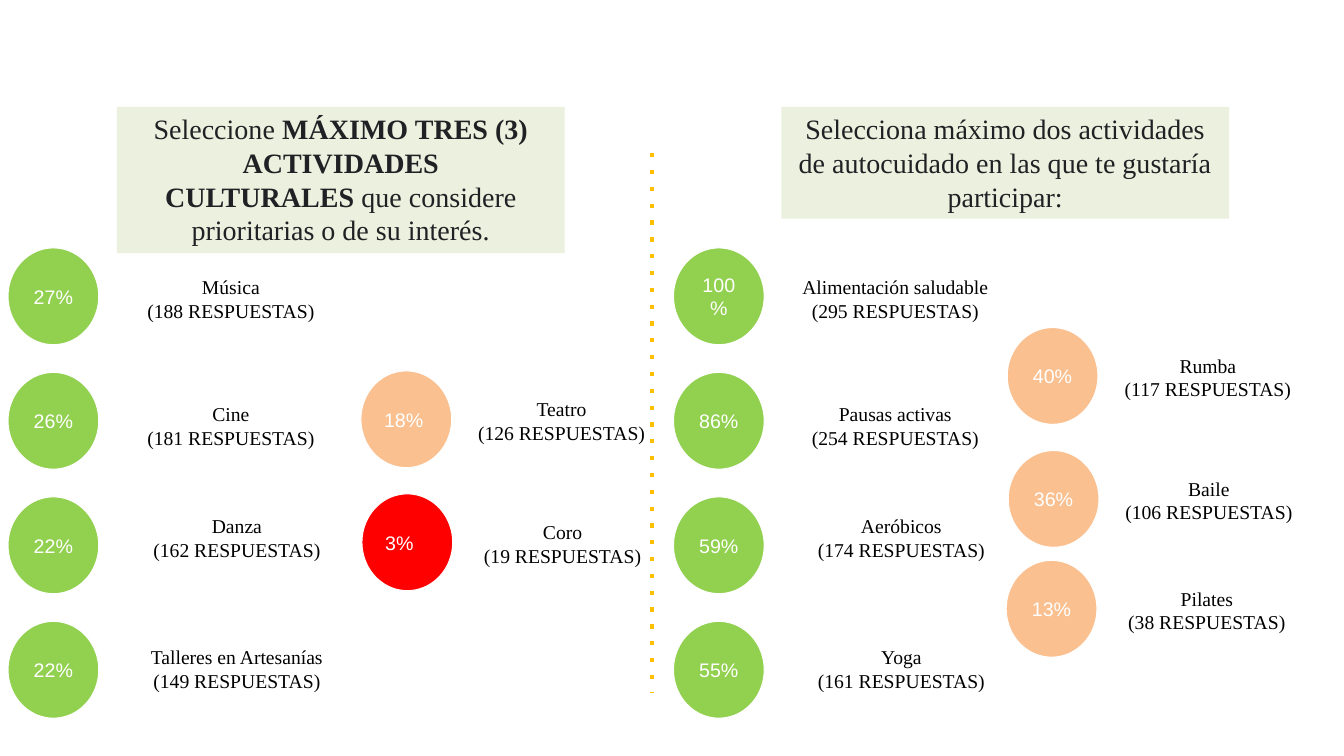
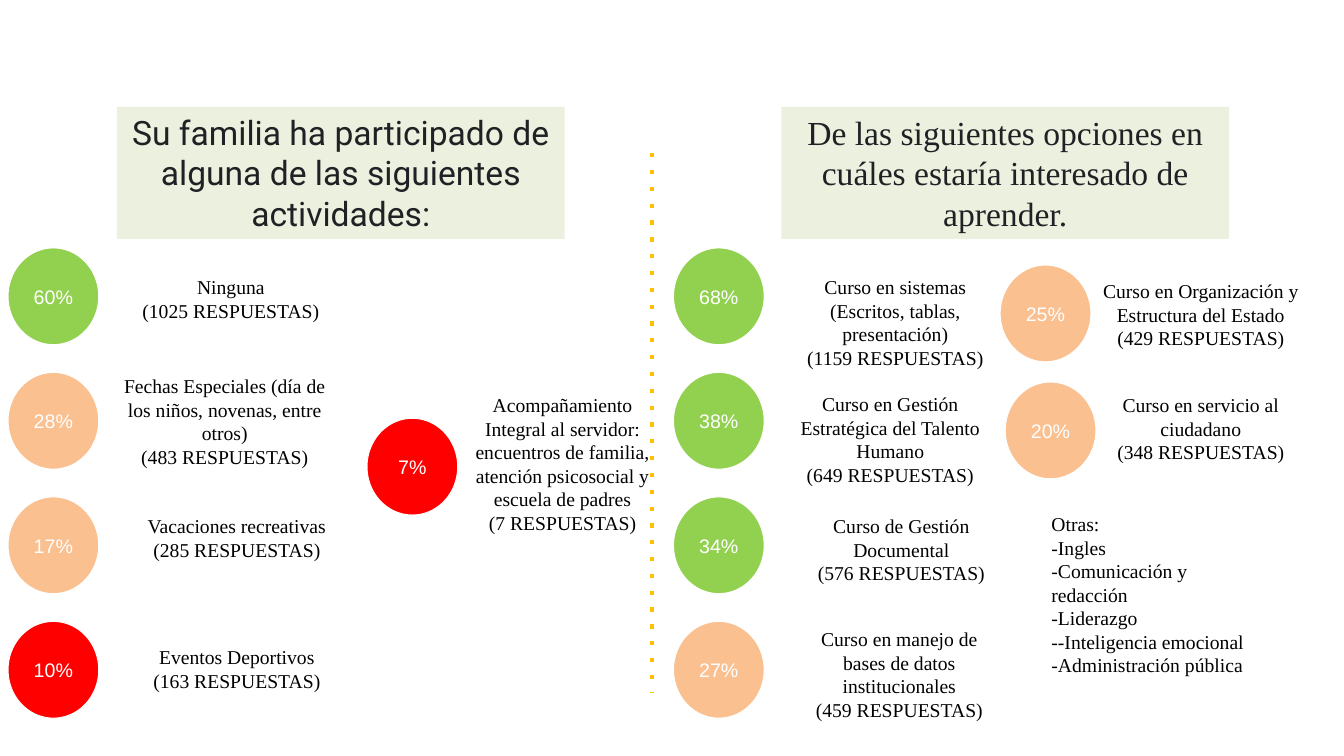
from pptx import Presentation
from pptx.dml.color import RGBColor
from pptx.enum import dml, shapes, text
from pptx.oxml.ns import qn
from pptx.util import Inches, Pt

GREEN, PEACH, RED = "92D050", "FAC090", "FF0000"
BAND, INK, GOLD, WHITE, BLACK = "EBF1DE", "202124", "FFC000", "FFFFFF", "000000"
SERIF = "Times New Roman"
LEFT, CENTER = text.PP_ALIGN.LEFT, text.PP_ALIGN.CENTER
GLUE = chr(160)  # no-break space

# Grid: two halves, each with four rows of circle and label
HALF, TOP, ROW = 6.6, 2.46, 1.235
DOT_W, DOT_H = 0.9, 0.96
LABEL_W, LINE_H = 2.18, 0.235
LABELS = [(1.2, 2.63), (1.2, 3.89), (1.26, 5), (1.26, 6.3)]
WIDE = {"28%": 2.26}  # label widths that differ, by share


def color(code):
    return RGBColor.from_string(code)


def write(shape, lines, size, font, ink, align=CENTER, pad=0.1, fit=True):
    """Fill a shape with paragraphs in one style."""
    frame = shape.text_frame
    frame.text = "\n".join(lines)
    frame.word_wrap = True
    frame.margin_left = frame.margin_right = Inches(0.1)
    frame.margin_top = frame.margin_bottom = Inches(pad)
    frame.vertical_anchor = text.MSO_ANCHOR.TOP if fit else text.MSO_ANCHOR.MIDDLE
    frame.auto_size = (text.MSO_AUTO_SIZE.SHAPE_TO_FIT_TEXT if fit
                       else text.MSO_AUTO_SIZE.NONE)
    for par in frame.paragraphs:
        par.alignment = align
        for run in par.runs:
            run.font.size, run.font.name = Pt(size), font
            run.font.color.rgb = color(ink)


# heads: text, size, font, height
# rows (by half): share, colour, name, answers, label lines, label shift x, y
# sides: circle x, y, alignment, share, colour, name, answers, lines, shift x, y
pages = [
    {
        "heads": [
            (f"Seleccione{GLUE}MÁXIMO TRES (3) ACTIVIDADES CULTURALES{GLUE}que "
             "considere prioritarias o de su interés.", 20, SERIF, 1.45),
            (f"Selecciona{GLUE}máximo dos actividades de autocuidado en las que te "
             "gustaría participar:", 20, SERIF, 1.11),
        ],
        "bold": f"MÁXIMO TRES (3) ACTIVIDADES CULTURALES{GLUE}",
        "rows": [
            [("27%", GREEN, "Música", 188, 2, 0, 0),
             ("26%", GREEN, "Cine", 181, 2, 0, 0),
             ("22%", GREEN, "Danza", 162, 2, 0, 0),
             ("22%", GREEN, "Talleres en Artesanías", 149, 2, 0, 0)],
            [("100%", GREEN, "Alimentación saludable", 295, 2, 0, 0),
             ("86%", GREEN, "Pausas activas", 254, 2, 0, 0),
             ("59%", GREEN, "Aeróbicos", 174, 2, 0, 0),
             ("55%", GREEN, "Yoga", 161, 2, 0, 0)],
        ],
        "sides": [
            (3.58, 3.68, LEFT, "18%", PEACH, "Teatro", 126, 2, 0.9, 0.16),
            (3.59, 4.9, LEFT, "3%", RED, "Coro", 19, 2, 0.9, 0.16),
            (9.99, 3.25, CENTER, "40%", PEACH, "Rumba", 117, 2, 0.9, 0.16),
            (10, 4.47, CENTER, "36%", PEACH, "Baile", 106, 2, 0.9, 0.16),
            (9.98, 5.56, CENTER, "13%", PEACH, "Pilates", 38, 2, 0.9, 0.16),
        ],
        "more": [],
    },
    {
        "heads": [
            ("Su familia ha participado de alguna de las siguientes actividades:",
             24, "Roboto", 1.31),
            ("De las siguientes opciones en cuáles estaría interesado de aprender.",
             24, SERIF, 1.31),
        ],
        "bold": "",
        "rows": [
            [("60%", GREEN, "Ninguna", 1025, 2, 0, 0),
             ("28%", PEACH, "Fechas Especiales (día de los niños, novenas, entre otros)",
              483, 4, -0.1, -0.28),
             ("17%", PEACH, "Vacaciones recreativas", 285, 2, 0, 0),
             ("10%", RED, "Eventos Deportivos", 163, 2, 0, 0)],
            [("68%", GREEN, "Curso en sistemas (Escritos, tablas, presentación)",
              1159, 4, 0, 0),
             ("38%", GREEN, "Curso en Gestión Estratégica del Talento Humano",
              649, 4, -0.05, -0.1),
             ("34%", GREEN, "Curso de Gestión Documental", 576, 3, 0, 0),
             ("27%", PEACH, "Curso en manejo de bases de datos institucionales",
              459, 4, -0.02, -0.18)],
        ],
        "sides": [
            (3.64, 4.15, CENTER, "7%", RED,
             "Acompañamiento Integral al servidor: encuentros de familia, "
             "atención psicosocial y escuela de padres", 7, 6, 0.85, -0.35),
            (9.92, 2.63, CENTER, "25%", PEACH,
             "Curso en Organización y Estructura del Estado", 429, 3, 0.9, 0.04),
            (9.97, 3.79, CENTER, "20%", PEACH,
             "Curso en servicio al ciudadano", 348, 3, 0.85, 0.01),
        ],
        "more": ["Otras:", "-Ingles", "-Comunicación y redacción", "-Liderazgo",
                 "--Inteligencia emocional", "-Administración pública"],
    },
]

deck = Presentation()
deck.slide_width, deck.slide_height = Inches(13.33), Inches(7.5)

for page in pages:
    slide = deck.slides.add_slide(deck.slide_layouts[5])
    items = slide.shapes

    # Heading bands
    for half, (words, size, font, high) in enumerate(page["heads"]):
        band = items.title if half == 0 else items.add_textbox(0, 0, 0, 0)
        band.left, band.top = Inches(1.16 + half * 6.59), Inches(1.06)
        band.width, band.height = Inches(4.44), Inches(high)
        band.fill.solid()
        band.fill.fore_color.rgb = color(BAND)
        bold = page["bold"] if half == 0 else ""
        write(band, [words], size, font, INK, pad=0.05)
        if bold:
            start, end = words.split(bold)
            par = band.text_frame.paragraphs[0]
            par.runs[0].text = start
            for part in (bold, end):
                run = par.add_run()
                run.text = part
                run.font.size, run.font.name = Pt(size), font
                run.font.color.rgb = color(INK)
                run.font.bold = part == bold

    # Divider
    rule = items.add_connector(shapes.MSO_CONNECTOR.STRAIGHT, Inches(6.47),
                               Inches(1.52), Inches(6.47), Inches(6.87))
    rule.line.color.rgb = color(GOLD)
    rule.line.width = Pt(3)
    rule.line.dash_style = dml.MSO_LINE.ROUND_DOT
    props = rule._element.spPr
    props.find(".//" + qn("a:prstDash")).set("val", "dot")
    props.append(props.makeelement(qn("a:effectLst"), {}))

    # Place every circle with its label
    spots = []
    for half, rows in enumerate(page["rows"]):
        for i, (share, fill, name, count, lines, dx, dy) in enumerate(rows):
            x, y = LABELS[i]
            spots.append((0.08 + half * HALF, TOP + i * ROW, CENTER, share, fill,
                          name, count, lines, x + half * 6.59 + dx, y + dy))
    for x, y, align, share, fill, name, count, lines, dx, dy in page["sides"]:
        spots.append((x, y, align, share, fill, name, count, lines, x + dx, y + dy))

    for x, y, align, share, fill, name, count, lines, tx, ty in spots:
        label = items.add_textbox(Inches(tx), Inches(ty),
                                  Inches(WIDE.get(share, LABEL_W)),
                                  Inches(0.2 + lines * LINE_H))
        write(label, [name, f"({count} RESPUESTAS)"], 14, SERIF, BLACK)
        dot = items.add_shape(shapes.MSO_SHAPE.OVAL, Inches(x), Inches(y),
                              Inches(DOT_W), Inches(DOT_H))
        dot.shadow.inherit = False
        dot.fill.solid()
        dot.fill.fore_color.rgb = color(fill)
        dot.line.color.rgb = color(WHITE)
        dot.line.width = Pt(0.75)
        write(dot, [share], 14, "Arial", WHITE, align, fit=False)

    if page["more"]:
        more = items.add_textbox(Inches(10.33), Inches(4.98), Inches(LABEL_W),
                                 Inches(0.2 + 7 * LINE_H))
        write(more, page["more"], 14, SERIF, BLACK, LEFT)

deck.save("out.pptx")
